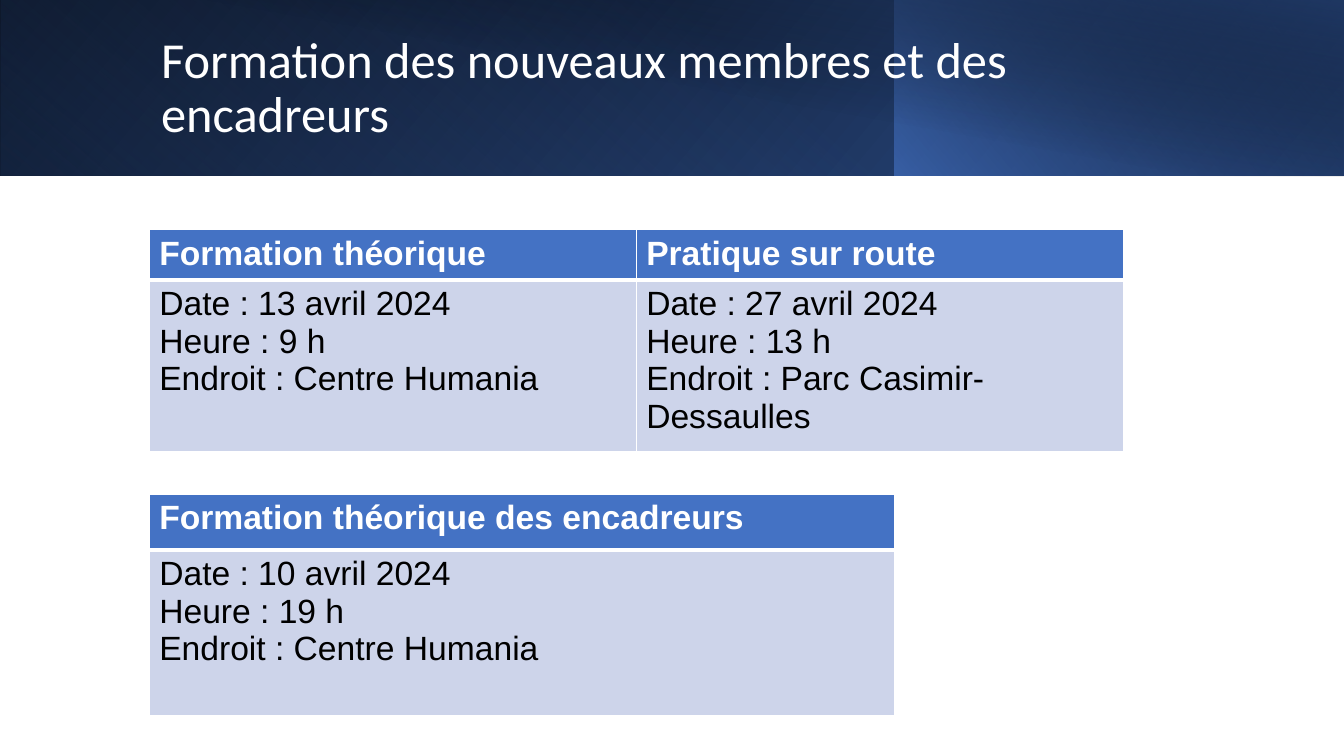
"""Build the slide announcing training sessions for new members and leaders."""
from lxml import etree
from pptx import Presentation
from pptx.dml.color import RGBColor
from pptx.enum.shapes import MSO_SHAPE
from pptx.enum.text import MSO_ANCHOR
from pptx.oxml import parse_xml
from pptx.oxml.ns import nsdecls, qn
from pptx.util import Inches, Pt

COLORS = {
    "black": "000000",
    "white": "FFFFFF",
    "blue": "4472C4",
    "deep": "2F5496",
    "navy": "1F3864",
    "pale": "CDD4EA",
}


def write_text(frame, text, *, size, font, color, bold=False, spacing=1.0):
    frame.word_wrap = True
    for index, line in enumerate(text.split("\n")):
        paragraph = frame.paragraphs[0] if index == 0 else frame.add_paragraph()
        paragraph.line_spacing = spacing
        run = paragraph.add_run()
        run.text = line
        run.font.size = Pt(size)
        run.font.name = font
        run.font.bold = bold
        run.font.color.rgb = RGBColor.from_string(COLORS[color])


def add_border(cell, side, width):
    border = parse_xml(
        f'<a:{side} {nsdecls("a")} w="{Pt(width)}"><a:solidFill>'
        f'<a:srgbClr val="{COLORS["white"]}"/></a:solidFill></a:{side}>'
    )
    cell._tc.get_or_add_tcPr().append(border)


presentation = Presentation()
presentation.slide_width = Inches(13.33)
presentation.slide_height = Inches(7.5)
slide = presentation.slides.add_slide(presentation.slide_layouts[6])

banner_layers = [
    (0, 13.33, 1.74, 0, True, 140, [(0, "black", 100), (100, "deep", 100)]),
    (0, 8.88, 1.74, 180, True, 230,
     [(0, "blue", 0), (20, "blue", 0), (100, "navy", 55)]),
    (8.87, 4.46, 1.74, 0, True, 220, [(0, "blue", 66), (100, "black", 30)]),
    (0.5, 12.83, 1.75, 0, False, 280,
     [(0, "black", 0), (50, "black", 0), (99, "navy", 52), (100, "navy", 52)]),
]
for left, width, height, rotation, flipped, angle, stops in banner_layers:
    shape = slide.shapes.add_shape(
        MSO_SHAPE.RECTANGLE, Inches(left), 0, Inches(width), Inches(height))
    shape.shadow.inherit = False
    shape.line.fill.background()
    shape.rotation = rotation
    properties = shape._element.spPr
    if flipped:
        properties.find(qn("a:xfrm")).set("flipH", "1")
    shape.fill.gradient()
    gradient = properties.find(qn("a:gradFill"))
    gradient.set("rotWithShape", "1")
    stop_list = gradient.find(qn("a:gsLst"))
    for stop in list(stop_list):
        stop_list.remove(stop)
    for position, color, opacity in stops:
        stop = etree.SubElement(stop_list, qn("a:gs"), pos=str(position * 1000))
        tint = etree.SubElement(stop, qn("a:srgbClr"), val=COLORS[color])
        if opacity < 100:
            etree.SubElement(tint, qn("a:alpha"), val=str(opacity * 1000))
    gradient.find(qn("a:lin")).set("ang", str(angle * 60000))

title = slide.shapes.add_textbox(
    Inches(1.5), Inches(0.32), Inches(10.82), Inches(1.13))
title.text_frame.vertical_anchor = MSO_ANCHOR.MIDDLE
write_text(title.text_frame, "Formation des nouveaux membres et des encadreurs",
           size=36, font="Calibri", color="white", spacing=0.9)

session_tables = [
    (2.28, 4.83, (0.47, 1.58), [
        ("Formation théorique",
         "Date : 13 avril 2024\nHeure : 9 h\nEndroit : Centre Humania"),
        ("Pratique sur route",
         "Date : 27 avril 2024\nHeure : 13 h\nEndroit : Parc Casimir-Dessaulles"),
    ]),
    (4.9, 7.39, (0.56, 1.64), [
        ("Formation théorique des encadreurs",
         "Date : 10 avril 2024\nHeure : 19 h\nEndroit : Centre Humania"),
    ]),
]
row_styles = [
    ("blue", "white", True, {"lnL": 1, "lnR": 1, "lnT": 1, "lnB": 3}),
    ("pale", "black", False, {"lnL": 1, "lnR": 1, "lnT": 3, "lnB": 1}),
]
for top, column_width, row_heights, sessions in session_tables:
    table = slide.shapes.add_table(
        2, len(sessions), Inches(1.48), Inches(top),
        Inches(column_width * len(sessions)), Inches(sum(row_heights))).table
    for row, height in zip(table.rows, row_heights):
        row.height = Inches(height)
    for column, session in enumerate(sessions):
        table.columns[column].width = Inches(column_width)
        for row, (text, style) in enumerate(zip(session, row_styles)):
            fill, color, bold, borders = style
            cell = table.cell(row, column)
            for side, width in borders.items():
                add_border(cell, side, width)
            cell.fill.solid()
            cell.fill.fore_color.rgb = RGBColor.from_string(COLORS[fill])
            write_text(cell.text_frame, text, size=24, font="Arial",
                       color=color, bold=bold)

presentation.save("out.pptx")
